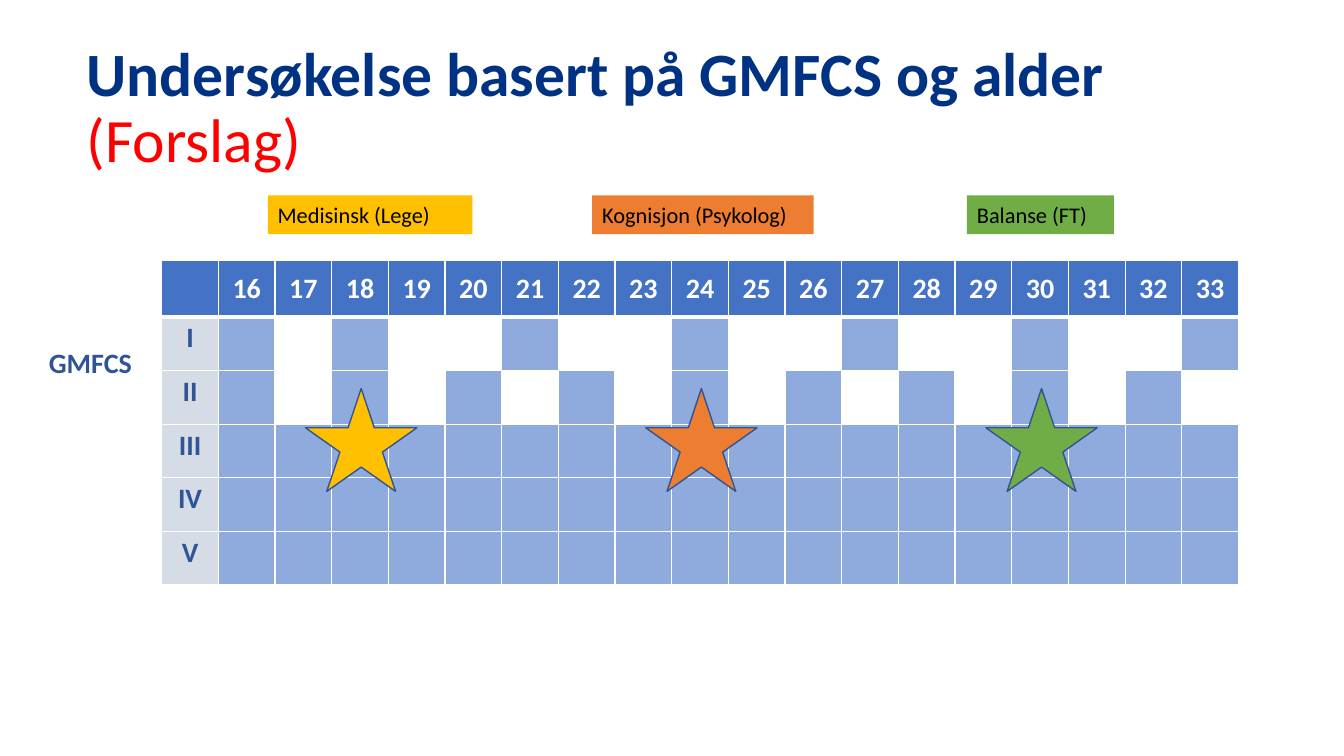
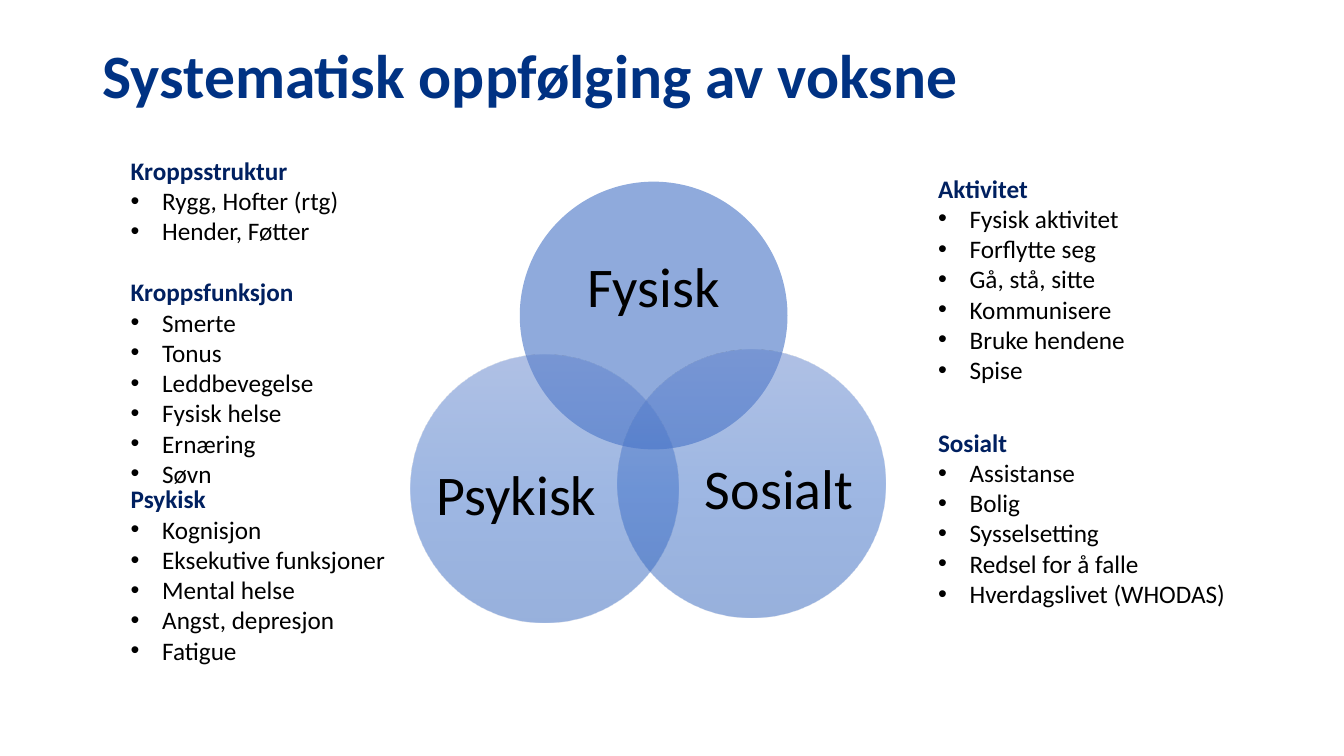
import pptx
import pptx.dml.color
import pptx.enum.shapes
import pptx.enum.text
import pptx.oxml
import pptx.oxml.ns
import pptx.util

PX = 9525
FONT = "Calibri"
HUES = {
    "title": "003283", "red": "FF0000", "black": "000000", "white": "FFFFFF",
    "navy": "002060", "blue": "4472C4", "light": "8FAADC", "pale": "D6DCE5",
    "label": "2F5597", "edge": "325491",
    "gold": "FFC000", "orange": "ED7D31", "green": "70AD47",
}
SHADES = [(0, "6183CB"), (50, "3E70CA"), (100, "3062BB")]
LEFT, TOP, SIDE, HEAD, ROW = 154, 248, 54, 54, 51
AGES = range(16, 34)
LEVELS = [
    ("I", lambda age: age == 16 or age % 3 == 0),
    ("II", lambda age: age % 2 == 0),
    ("III", lambda age: True),
    ("IV", lambda age: True),
    ("V", lambda age: True),
]
EXAMS = [
    ("Medisinsk (Lege)", "gold", 255, 195, 18),
    ("Kognisjon (Psykolog)", "orange", 564, 211, 24),
    ("Balanse (FT)", "green", 921, 140, 30),
]
DISCS = [(495, 173, False), (588, 333, True), (391, 338, True)]
NAMES = [
    ("Fysisk", (529, 218, 187, 115)),
    ("Sosialt", (665, 398, 154, 140)),
    ("Psykisk", (415, 404, 154, 140)),
]
LISTS = [
    ((115, 143, 278, 314), [
        ("Kroppsstruktur", ["Rygg, Hofter (rtg)", "Hender, Føtter"]),
        ("Kroppsfunksjon", ["Smerte", "Tonus", "Leddbevegelse",
                            "Fysisk helse", "Ernæring", "Søvn"]),
    ]),
    ((115, 456, 278, 170), [
        ("Psykisk", ["Kognisjon", "Eksekutive funksjoner", "Mental helse",
                     "Angst, depresjon", "Fatigue"]),
    ]),
    ((884, 160, 229, 213), [
        ("Aktivitet", ["Fysisk aktivitet", "Forflytte seg", "Gå, stå, sitte",
                       "Kommunisere", "Bruke hendene", "Spise"]),
    ]),
    ((884, 402, 318, 185), [
        ("Sosialt", ["Assistanse", "Bolig", "Sysselsetting",
                     "Redsel for å falle", "Hverdagslivet (WHODAS)"]),
    ]),
]
ALIGN = pptx.enum.text.PP_ALIGN
ANCHOR = pptx.enum.text.MSO_ANCHOR
SHAPE = pptx.enum.shapes.MSO_SHAPE
Pt = pptx.util.Pt


def emu(*sizes):
    return [size * PX for size in sizes]


def rgb(hue):
    return pptx.dml.color.RGBColor.from_string(HUES[hue])


def style(font, size, hue, bold=False):
    font.name = FONT
    font.size = Pt(size)
    font.bold = bold
    font.color.rgb = rgb(hue)


def paint(fill, hue):
    fill.solid()
    fill.fore_color.rgb = rgb(hue)


def child(parent, tag, **attrs):
    node = pptx.oxml.ns.qn(tag)
    node = parent.makeelement(node, {key: str(val) for key, val in attrs.items()})
    parent.append(node)
    return node


def write(para, text, size, hue, bold=False, align=ALIGN.LEFT):
    para.text = text
    para.alignment = align
    style(para.font, size, hue, bold)


def add_title(deck, rect, parts):
    slide = deck.slides.add_slide(deck.slide_layouts[5])
    title = slide.shapes.title
    title.left, title.top, title.width, title.height = emu(*rect)
    frame = title.text_frame
    frame.auto_size = pptx.enum.text.MSO_AUTO_SIZE.NONE
    frame.vertical_anchor = ANCHOR.TOP
    para = frame.paragraphs[0]
    para.alignment = ALIGN.LEFT
    para.line_spacing = 0.9
    for spot, (text, hue, bold) in enumerate(parts):
        if spot:
            para.add_line_break()
        run = para.add_run()
        run.text = text
        style(run.font, 44, hue, bold)
    return slide


def add_box(slide, rect):
    frame = slide.shapes.add_textbox(*emu(*rect)).text_frame
    frame.word_wrap = True
    return frame


def add_form(slide, kind, rect, hue, edge=None):
    form = slide.shapes.add_shape(kind, *emu(*rect))
    form.shadow.inherit = False
    paint(form.fill, hue)
    if edge:
        form.line.color.rgb = rgb(edge)
        form.line.width = Pt(1)
    else:
        form.line.fill.background()
    return form


def add_cell(cell, hue, text="", ink="white", low=1, anchor=ANCHOR.TOP):
    props = cell._tc.get_or_add_tcPr()
    for side, width in (("L", 1), ("R", 1), ("T", 1), ("B", low)):
        line = child(props, "a:ln" + side, w=Pt(width))
        child(child(line, "a:solidFill"), "a:srgbClr", val=HUES["white"])
    paint(cell.fill, hue)
    cell.vertical_anchor = anchor
    cell.margin_left = cell.margin_right = 9 * PX
    cell.margin_top = cell.margin_bottom = 4 * PX
    write(cell.text_frame.paragraphs[0], text, 20, ink, True, ALIGN.CENTER)


def add_grid(slide):
    cols, rows = len(AGES) + 1, len(LEVELS) + 1
    size = (cols * SIDE, HEAD + len(LEVELS) * ROW)
    grid = slide.shapes.add_table(rows, cols, *emu(LEFT, TOP, *size)).table
    grid.horz_banding = False
    for col in grid.columns:
        col.width = SIDE * PX
    for spot, row in enumerate(grid.rows):
        row.height = (ROW if spot else HEAD) * PX
    for col, text in enumerate(["", *map(str, AGES)]):
        add_cell(grid.cell(0, col), "blue", text, low=3, anchor=ANCHOR.MIDDLE)
    for row, (level, due) in enumerate(LEVELS, 1):
        add_cell(grid.cell(row, 0), "pale", level, "label")
        for col, age in enumerate(AGES, 1):
            add_cell(grid.cell(row, col), "light" if due(age) else "white")


def add_exam(slide, text, hue, left, width, age):
    tag = add_form(slide, SHAPE.RECTANGLE, (left, 186, width, 37), hue)
    tag.text_frame.vertical_anchor = ANCHOR.MIDDLE
    write(tag.text_frame.paragraphs[0], text, 16, "black")
    mid = LEFT + SIDE * (AGES.index(age) + 1) + SIDE // 2
    add_form(slide, SHAPE.STAR_5_POINT, (mid - 52, 370, 106, 98), hue, "edge")


def add_disc(slide, left, top, clear):
    disc = add_form(slide, SHAPE.OVAL, (left, top, 255, 255), "light")
    if not clear:
        return
    disc.fill.gradient()
    disc.fill.gradient_angle = 270
    stops = disc._element.spPr.find(".//" + pptx.oxml.ns.qn("a:gsLst"))
    for stop in list(stops):
        stops.remove(stop)
    for place, shade in SHADES:
        stop = child(stops, "a:gs", pos=place * 1000)
        child(child(stop, "a:srgbClr", val=shade), "a:alpha", val=50000)


def add_name(slide, text, rect):
    frame = add_box(slide, rect)
    frame.word_wrap = False
    frame.vertical_anchor = ANCHOR.MIDDLE
    frame.margin_left = frame.margin_right = 0
    frame.margin_top = frame.margin_bottom = 0
    para = frame.paragraphs[0]
    para.line_spacing = 0.9
    write(para, text, 40, "black", align=ALIGN.CENTER)


def add_point(frame, text):
    para = frame.add_paragraph()
    props = para._p.get_or_add_pPr()
    props.set("marL", str(30 * PX))
    props.set("indent", str(-30 * PX))
    child(props, "a:buFont", typeface="Arial")
    child(props, "a:buChar", char="•")
    write(para, text, 18, "black")


def add_list(slide, rect, groups):
    frame = add_box(slide, rect)
    for spot, (head, points) in enumerate(groups):
        para = frame.add_paragraph() if spot else frame.paragraphs[0]
        if spot:
            para.space_before = Pt(22)
        write(para, head, 18, "navy", True)
        for point in points:
            add_point(frame, point)


def main():
    deck = pptx.Presentation()
    deck.slide_width, deck.slide_height = emu(1280, 720)

    slide = add_title(deck, (73, 36, 1188, 139), [
        ("Undersøkelse basert på GMFCS og alder", "title", True),
        ("(Forslag)", "red", False),
    ])
    add_grid(slide)
    label = add_box(slide, (37, 324, 121, 71))
    write(label.paragraphs[0], "GMFCS", 20, "label", True)
    for exam in EXAMS:
        add_exam(slide, *exam)

    slide = add_title(deck, (88, 38, 1104, 139), [
        ("Systematisk oppfølging av voksne", "title", True),
    ])
    for disc in DISCS:
        add_disc(slide, *disc)
    for name in NAMES:
        add_name(slide, *name)
    for rect, groups in LISTS:
        add_list(slide, rect, groups)

    deck.save("out.pptx")


if __name__ == "__main__":
    main()
